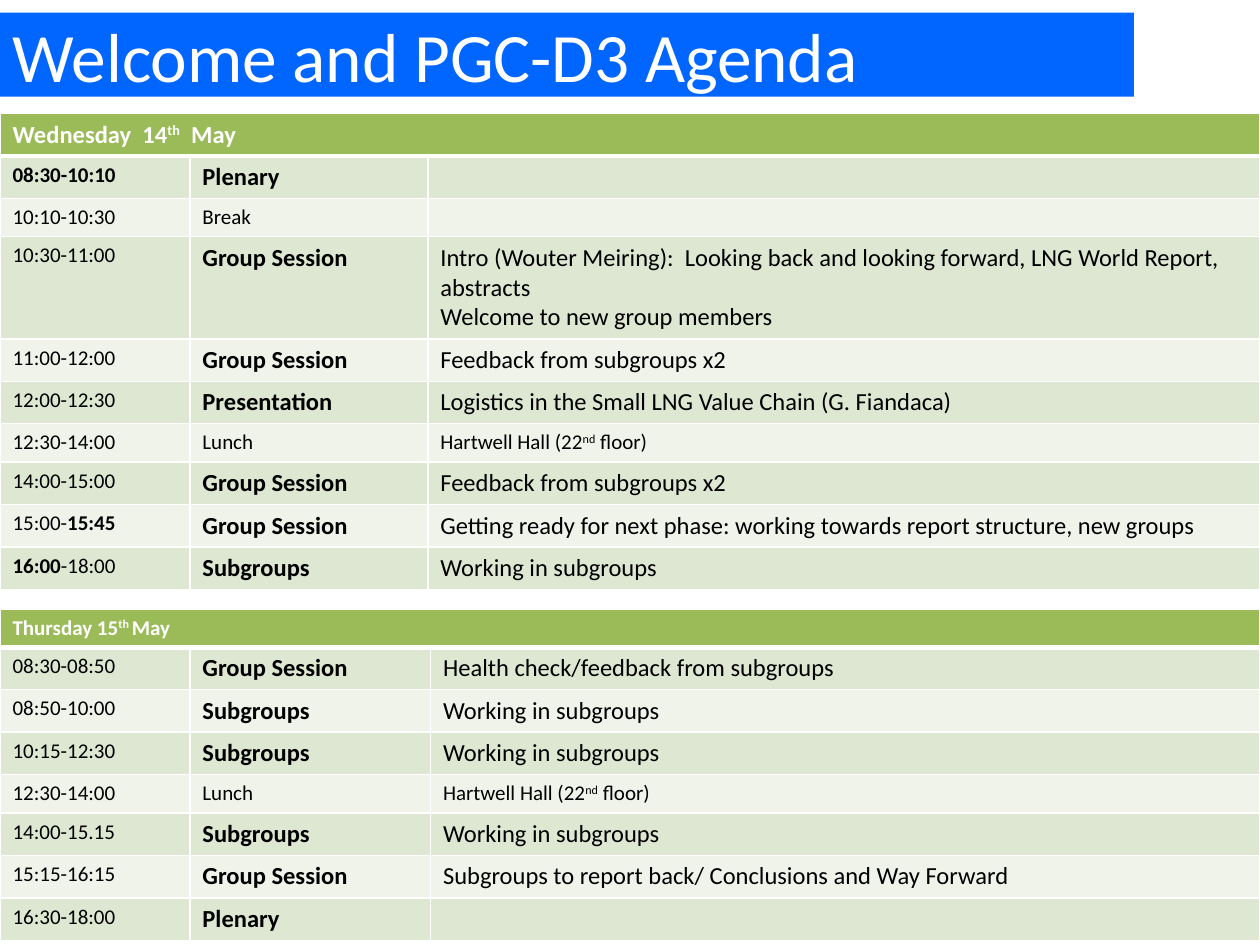
from lxml.etree import SubElement
from pptx import Presentation
from pptx.dml.color import RGBColor
from pptx.enum.text import MSO_ANCHOR, MSO_AUTO_SIZE, PP_ALIGN
from pptx.oxml.ns import qn
from pptx.util import Pt

BLUE = RGBColor(0x00, 0x66, 0xFF)
GREEN = RGBColor(0x9B, 0xBB, 0x59)
BANDS = (RGBColor(0xDE, 0xE7, 0xD1), RGBColor(0xEF, 0xF3, 0xEA))
WHITE = RGBColor(0xFF, 0xFF, 0xFF)
BLACK = RGBColor(0x00, 0x00, 0x00)
FONT = "Calibri"
BIG, SMALL = 14, 12
BREAKS = ("Break", "Lunch")
BOLD, SUPER = "bold", "super"

# Cell text is a list of paragraphs, each a list of spans: text or (text, style)
LUNCH_ROOM = [["Hartwell Hall (22", ("nd", SUPER), " floor)"]]
WORKING = [["Working in subgroups"]]
FEEDBACK = [["Feedback from subgroups x2"]]

WEDNESDAY = [
    ([("08:30-10:10", BOLD)], "Plenary", []),
    (["10:10-10:30"], "Break", []),
    (["10:30-11:00"], "Group Session", [
        ["Intro (Wouter Meiring):  Looking back and looking forward, "
         "LNG World Report, abstracts"],
        ["Welcome to new group members"]]),
    (["11:00-12:00"], "Group Session", FEEDBACK),
    (["12:00-12:30"], "Presentation",
     [["Logistics in the Small LNG Value Chain (G. Fiandaca)"]]),
    (["12:30-14:00"], "Lunch", LUNCH_ROOM),
    (["14:00-15:00"], "Group Session", FEEDBACK),
    (["15:00-", ("15:45", BOLD)], "Group Session",
     [["Getting ready for next phase: working towards report structure, "
       "new groups"]]),
    ([("16:00", BOLD), "-18:00"], "Subgroups", WORKING),
]
THURSDAY = [
    (["08:30-08:50"], "Group Session",
     [["Health check/feedback from subgroups"]]),
    (["08:50-10:00"], "Subgroups", WORKING),
    (["10:15-12:30"], "Subgroups", WORKING),
    (["12:30-14:00"], "Lunch", LUNCH_ROOM),
    (["14:00-15.15"], "Subgroups", WORKING),
    (["15:15-16:15"], "Group Session",
     [["Subgroups to report back/ Conclusions and Way Forward"]]),
    (["16:30-18:00"], "Plenary", []),
]


def add_span(para, text, size, color, bold=False, raised=False):
    span = para.add_run()
    span.text = text
    font = span.font
    font.name, font.size, font.bold = FONT, Pt(size), bold
    font.color.rgb = color
    if raised:
        span._r.get_or_add_rPr().set("baseline", "30000")


def set_border(cell, side, width):
    line = SubElement(cell._tc.get_or_add_tcPr(), qn(f"a:{side}"),
                      w=str(Pt(width)))
    fill = SubElement(line, qn("a:solidFill"))
    SubElement(fill, qn("a:srgbClr"), val=str(WHITE))


def fill_cell(cell, paragraphs, size, color, fill, bold=False, top=1, bottom=1):
    for side, width in (("lnL", 1), ("lnR", 1), ("lnT", top), ("lnB", bottom)):
        set_border(cell, side, width)
    cell.fill.solid()
    cell.fill.fore_color.rgb = fill
    frame = cell.text_frame
    for index, spans in enumerate(paragraphs):
        para = frame.add_paragraph() if index else frame.paragraphs[0]
        for item in spans:
            text, style = (item, None) if isinstance(item, str) else item
            add_span(para, text, size, color, bold or style == BOLD,
                     style == SUPER)
    if not paragraphs:
        # An empty cell must not make its row taller
        SubElement(frame.paragraphs[0]._p, qn("a:endParaRPr"),
                   sz=str(size * 100))


def row_height(size, lines=1):
    return Pt(round(size * 1.22 * lines + 7.2, 2))


def add_title(page, text, left, top, width, height):
    box = page.shapes.title
    box.left, box.top, box.width, box.height = map(Pt, (left, top, width, height))
    box.fill.solid()
    box.fill.fore_color.rgb = BLUE
    frame = box.text_frame
    frame.auto_size = MSO_AUTO_SIZE.NONE
    frame.word_wrap = True
    frame.vertical_anchor = MSO_ANCHOR.MIDDLE
    para = frame.paragraphs[0]
    para.alignment = PP_ALIGN.LEFT
    add_span(para, text, 39.6, WHITE)


def add_agenda(page, heading, heading_size, sessions, widths, left, top, height):
    table = page.shapes.add_table(len(sessions) + 1, len(widths), Pt(left),
                                  Pt(top), Pt(sum(widths)), Pt(height)).table
    for column, width in zip(table.columns, widths):
        column.width = Pt(width)

    # Heading across all columns
    table.rows[0].height = row_height(heading_size)
    table.cell(0, 0).merge(table.cell(0, len(widths) - 1))
    for index in range(len(widths)):
        fill_cell(table.cell(0, index), [] if index else [heading],
                  heading_size, WHITE, GREEN, True, bottom=3)

    # Sessions in alternating bands
    for index, (time, session, topic) in enumerate(sessions):
        row = index + 1
        pause = session in BREAKS
        size = SMALL if pause else BIG
        # The only two-paragraph topic wraps onto a third line
        table.rows[row].height = row_height(size, 3 if len(topic) > 1 else 1)
        look = dict(color=BLACK, fill=BANDS[index % 2], top=1 if index else 3)
        fill_cell(table.cell(row, 0), [time], SMALL, **look)
        fill_cell(table.cell(row, 1), [[session]], size, bold=not pause, **look)
        fill_cell(table.cell(row, 2), topic, size, **look)


def main():
    deck = Presentation()
    deck.slide_width, deck.slide_height = Pt(720), Pt(540)
    page = deck.slides.add_slide(deck.slide_layouts[5])
    add_title(page, "Welcome and PGC-D3 Agenda", 0, 7.2, 648, 48)
    add_agenda(page, ["Wednesday  14", ("th", SUPER), "  May"], BIG, WEDNESDAY,
               (108.5, 136, 475.5), 0, 64.8, 268.5)
    add_agenda(page, ["Thursday 15", ("th ", SUPER), "May"], SMALL, THURSDAY,
               (108.5, 137.5, 474), 0, 348, 187)
    deck.save("out.pptx")


if __name__ == "__main__":
    main()
